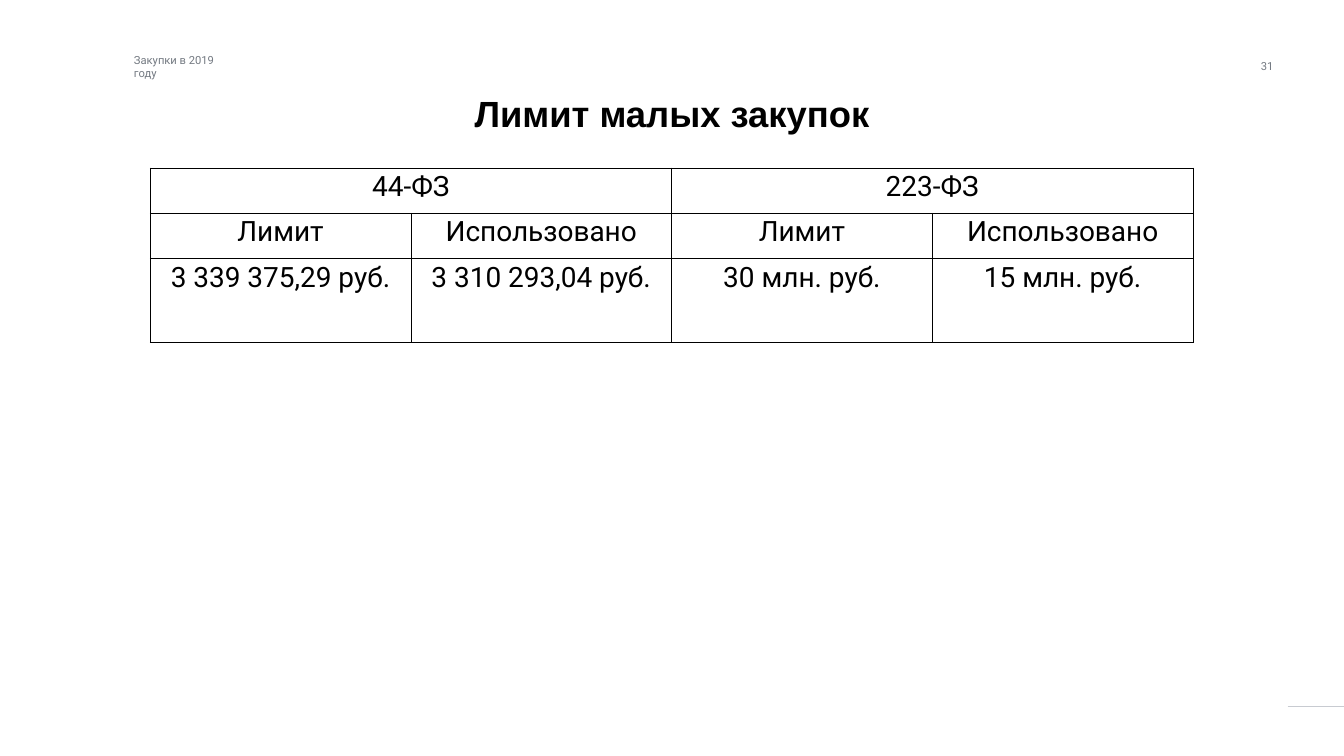
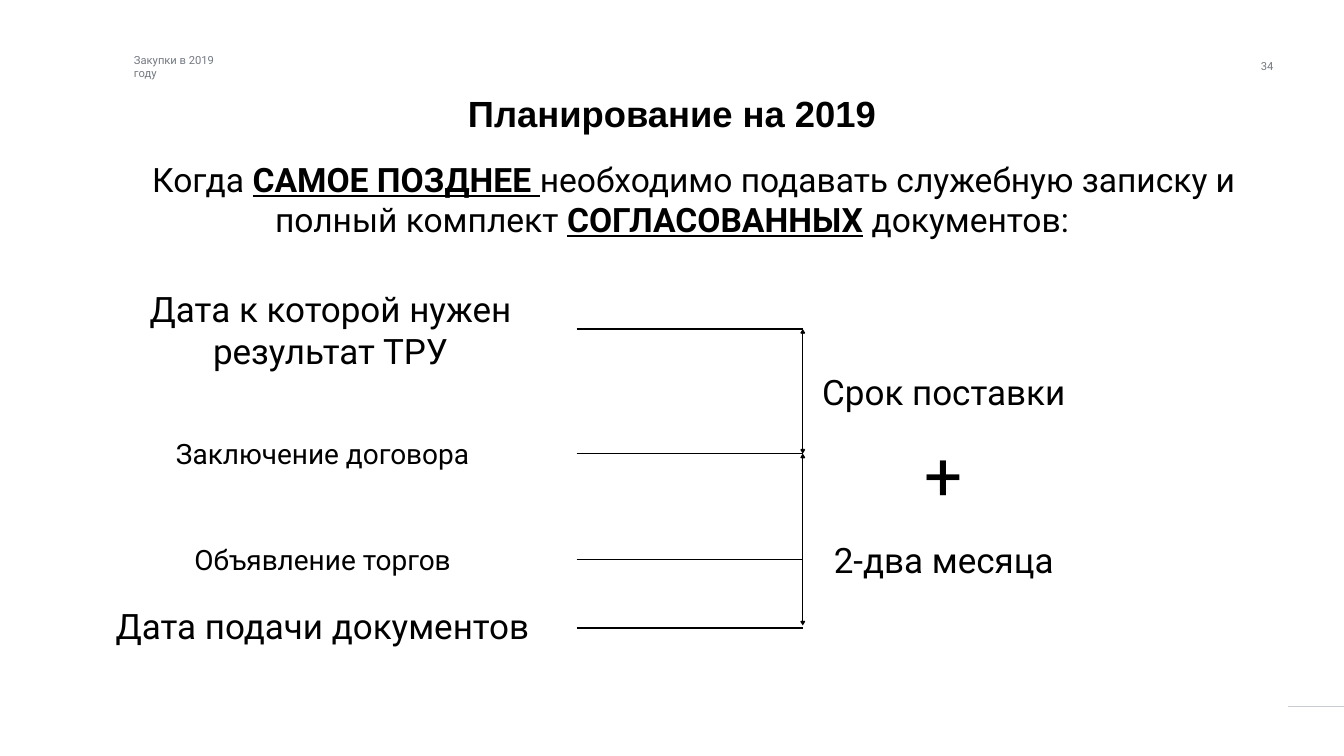
from lxml import etree
from pptx import Presentation
from pptx import util as u
from pptx.dml.color import RGBColor
from pptx.enum import shapes, text
from pptx.oxml import ns

W, H = 26.67, 15
COLORS = {"paper": "FFFFFF", "ink": "000000", "grey": "747A82", "rule": "C8CBD1"}
FONT, TITLE_FONT = "Roboto", "Arial"
CENTER, LEFT, RIGHT = text.PP_ALIGN.CENTER, text.PP_ALIGN.LEFT, text.PP_ALIGN.RIGHT

SUBJECT = "Закупки в 2019 году"
LIMITS = {
    "page": "31", "title": "Лимит малых закупок", "title_width": 30.18,
    "groups": ["44-ФЗ", "223-ФЗ"],
    "rows": [
        ["Лимит", "Использовано", "Лимит", "Использовано"],
        ["3 339 375,29 руб.", "3 310 293,04 руб.", "30 млн. руб.", "15 млн. руб."],
    ],
    "left": 11.17, "top": 22.2, "col": 19.4, "heights": [6, 6, 11.13],
}
PLAN = {
    "page": "34", "title": "Планирование на 2019", "title_width": 31.12,
    "intro": [
        ("Когда ", False), ("САМОЕ ПОЗДНЕЕ ", True),
        ("необходимо подавать служебную записку и полный комплект ", False),
        ("СОГЛАСОВАННЫХ", True), (" документов:", False),
    ],
    "stages": [
        ("Дата к которой нужен результат ТРУ", 6.3, 37.53, 12, 50),
        ("Заключение договора", 5.7, 57.33, 5.27, 40),
        ("Объявление торгов", 5.7, 71.33, 5.27, 40),
        ("Дата подачи документов", 5.7, 79.6, 6.33, 50),
    ],
    "terms": [
        ("Срок поставки", 48.67, 6.33, 50),
        ("+", 56.87, 11.53, 96),
        ("2-два месяца", 70.8, 6.33, 50),
    ],
    "levels": [43.53, 60, 74, 83.07],
    "spans": [(43.53, 60), (60, 82.73)],
    "line_left": 42.9, "line_right": 59.73,
}


def x(cols):
    return u.Inches(W * cols / 100)


def y(rows):
    return u.Inches(H * rows / 100)


def rgb(name):
    return RGBColor.from_string(COLORS[name])


def apply(target, values):
    for key, value in values.items():
        setattr(target, key, value)


def write(p, runs, size, color="ink", font=FONT, bold=False, align=CENTER):
    p.alignment = align
    for words, strong in runs:
        r = p.add_run()
        r.text = words
        apply(r.font, {"name": font, "size": u.Pt(size),
                       "bold": bold or strong, "underline": strong})
        r.font.color.rgb = rgb(color)


def add_text(slide, at, runs, size, inset=0.06, anchor=text.MSO_ANCHOR.MIDDLE,
             wrap=True, **style):
    left, top, width, height = at
    sp = slide.shapes.add_textbox(x(left), y(top), x(width), y(height))
    tf = sp.text_frame
    apply(tf, {"word_wrap": wrap, "vertical_anchor": anchor,
               "auto_size": text.MSO_AUTO_SIZE.SHAPE_TO_FIT_TEXT})
    apply(tf, {f"margin_{side}": u.Inches(inset)
               for side in ("left", "top", "right", "bottom")})
    if isinstance(runs, str):
        runs = [(runs, False)]
    write(tf.paragraphs[0], runs, size, **style)
    return sp


def add_line(slide, start, end, color="ink", width=2, arrows=False):
    sp = slide.shapes.add_connector(shapes.MSO_CONNECTOR.STRAIGHT,
                                    x(start[0]), y(start[1]), x(end[0]), y(end[1]))
    sp.line.color.rgb = rgb(color)
    sp.line.width = u.Pt(width)
    if arrows:
        ln = sp.line._get_or_add_ln()
        for tag in ("a:headEnd", "a:tailEnd"):
            etree.SubElement(ln, ns.qn(tag), type="arrow")
    etree.SubElement(sp._element.spPr, ns.qn("a:effectLst"))
    return sp


def add_base(prs, content):
    slide = prs.slides.add_slide(prs.slide_layouts[6])
    slide.background.fill.solid()
    slide.background.fill.fore_color.rgb = rgb("paper")
    add_text(slide, (9.97, 7.93, 7.76, 1.8), SUBJECT, 16, inset=0,
             color="grey", align=LEFT)
    add_line(slide, (95.8, 93.47), (100, 93.47), "rule", 1)
    add_text(slide, (93.63, 7.87, 1.12, 1.73), content["page"], 16, inset=0,
             anchor=text.MSO_ANCHOR.TOP, color="grey", align=RIGHT)
    width = content["title_width"]
    add_text(slide, (50 - width / 2, 11.67, width, 6.6), content["title"], 52,
             wrap=False, font=TITLE_FONT, bold=True)
    return slide


def style_cell(cell):
    tcPr = cell._tc.get_or_add_tcPr()
    for side in ("L", "R", "T", "B"):
        ln = etree.SubElement(tcPr, ns.qn(f"a:ln{side}"), w=str(u.Pt(1)))
        fill = etree.SubElement(ln, ns.qn("a:solidFill"))
        etree.SubElement(fill, ns.qn("a:srgbClr"), val=COLORS["ink"])
    cell.fill.background()


def build_limits(prs, content):
    slide = add_base(prs, content)
    heights, n = content["heights"], len(content["rows"][0])
    table = slide.shapes.add_table(len(heights), n, x(content["left"]), y(content["top"]),
                                   x(content["col"] * n), y(sum(heights))).table
    apply(table, {"first_row": False, "horz_banding": False})
    for col in table.columns:
        col.width = x(content["col"])
    for row, height in zip(table.rows, heights):
        row.height = y(height)
    for cell in table.iter_cells():
        style_cell(cell)
    for i, group in enumerate(content["groups"]):
        cell = table.cell(0, 2 * i)
        cell.merge(table.cell(0, 2 * i + 1))
        write(cell.text_frame.paragraphs[0], [(group, False)], 40)
    for i, row in enumerate(content["rows"], 1):
        for j, value in enumerate(row):
            write(table.cell(i, j).text_frame.paragraphs[0], [(value, False)], 40)


def build_plan(prs, content):
    slide = add_base(prs, content)
    intro = add_text(slide, (3.79, 20.6, 92.43, 16.93), content["intro"], 48,
                     anchor=text.MSO_ANCHOR.TOP)
    intro.text_frame.auto_size = text.MSO_AUTO_SIZE.NONE
    pPr = intro.text_frame.paragraphs[0]._p.get_or_add_pPr()
    for key, value in {"marL": 0, "indent": u.Inches(0.87)}.items():
        pPr.set(key, str(value))
    stages = [add_text(slide, (left, top, 36.6, height), words, size)
              for words, left, top, height, size in content["stages"]]
    for words, top, height, size in content["terms"]:
        add_text(slide, (60.93, top, 18.6, height), words, size)
    left, right = content["line_left"], content["line_right"]
    lines = [add_line(slide, (left, level), (right, level)) for level in content["levels"]]
    lines[0].begin_connect(stages[0], 3)
    for top, bottom in content["spans"]:
        add_line(slide, (right, top), (right, bottom), arrows=True)


def main():
    prs = Presentation()
    apply(prs, {"slide_width": u.Inches(W), "slide_height": u.Inches(H)})
    build_limits(prs, LIMITS)
    build_plan(prs, PLAN)
    prs.save("out.pptx")


if __name__ == "__main__":
    main()
